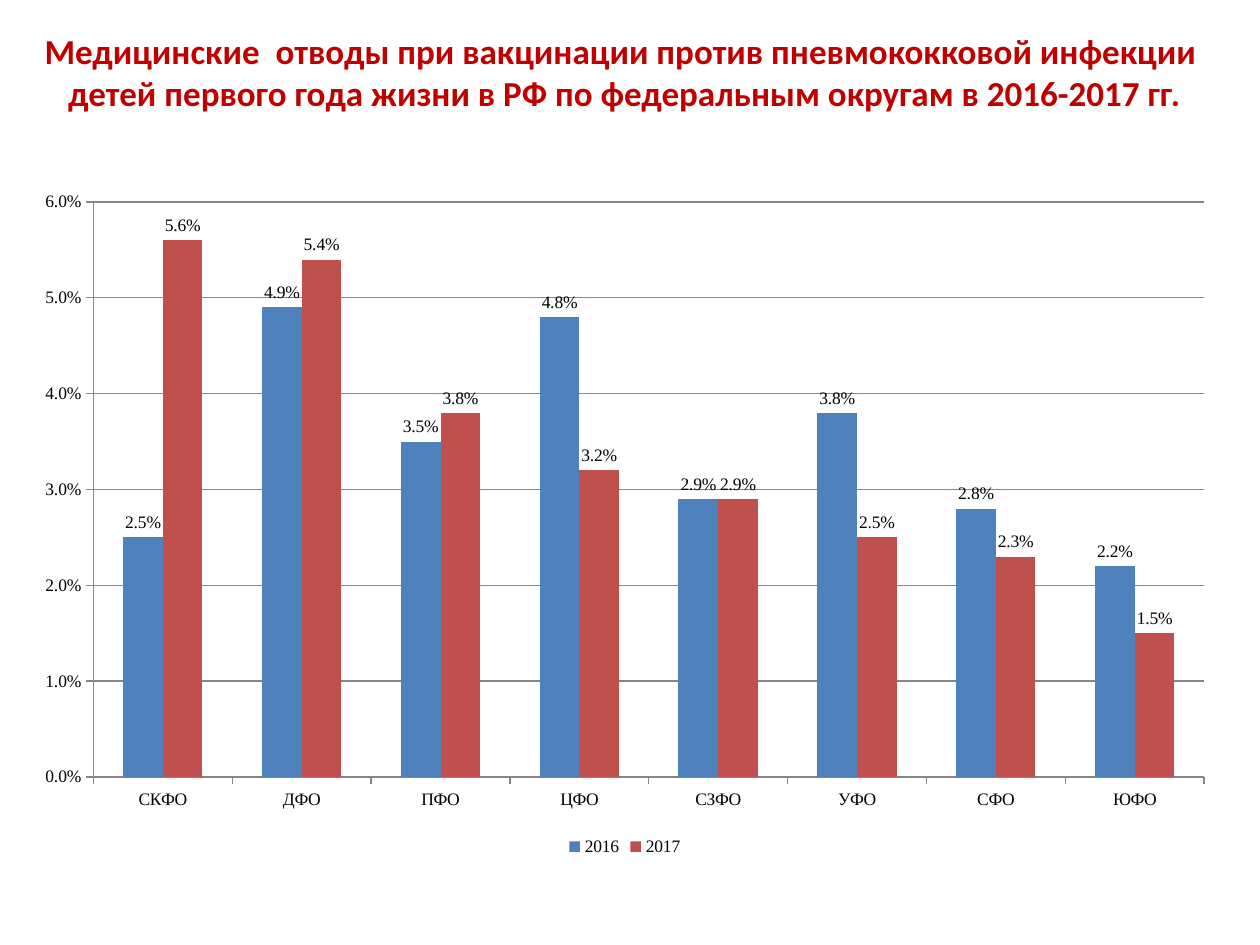
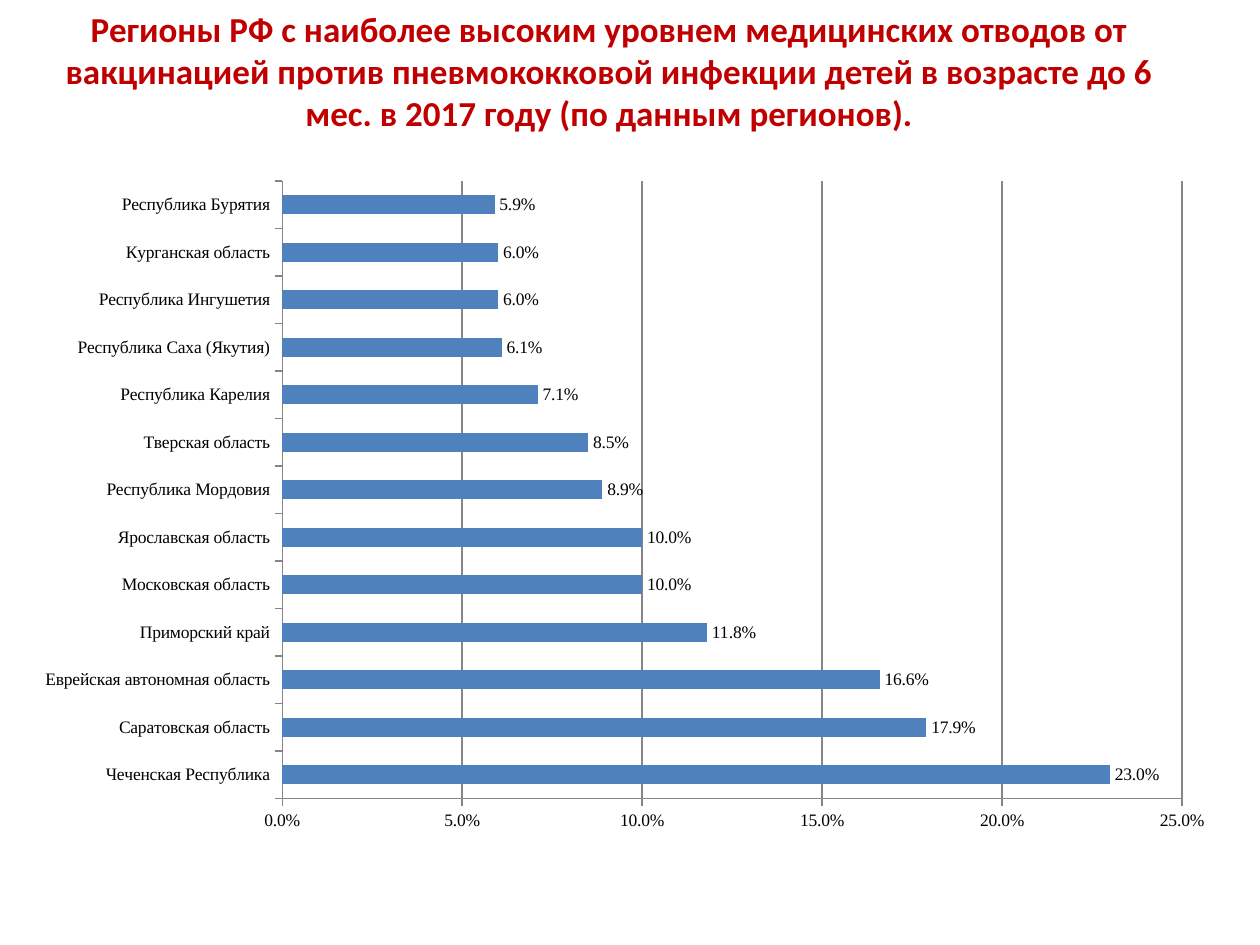
"""Build two slides on medical exemptions from pneumococcal vaccination."""
from pptx import Presentation
from pptx import util as u
from pptx.chart.data import CategoryChartData
from pptx.dml.color import RGBColor
from pptx.enum import chart as ch, text

COLORS = {"title": "C00000", "text": "000000", "blue": "4F81BD",
          "red": "C0504D", "line": "868686", "background": "FFFFFF"}
TITLE_FONT, CHART_FONT = "Calibri", "Times New Roman"
PERCENT = "0.0%"
LEFT, CHART_WIDTH = 0.43, 24.33

DISTRICTS = ["СКФО", "ДФО", "ПФО", "ЦФО", "СЗФО", "УФО", "СФО", "ЮФО"]
DISTRICT_RATES = {
    "2016": [0.025, 0.049, 0.035, 0.048, 0.029, 0.038, 0.028, 0.022],
    "2017": [0.056, 0.054, 0.038, 0.032, 0.029, 0.025, 0.023, 0.015],
}
REGION_RATES = {
    "Чеченская Республика": 0.23,
    "Саратовская область": 0.179,
    "Еврейская автономная область": 0.166,
    "Приморский край": 0.118,
    "Московская область": 0.1,
    "Ярославская область": 0.1,
    "Республика Мордовия": 0.089,
    "Тверская область": 0.085,
    "Республика Карелия": 0.071,
    "Республика Саха (Якутия)": 0.061,
    "Республика Ингушетия": 0.06,
    "Курганская область": 0.06,
    "Республика Бурятия": 0.059,
}


def rgb(name):
    return RGBColor.from_string(COLORS[name])


class Deck:
    def __init__(self):
        self.prs = Presentation()
        self.prs.slide_width, self.prs.slide_height = u.Cm(25.4), u.Cm(19.05)
        self.s = None

    def slide(self):
        self.s = self.prs.slides.add_slide(self.prs.slide_layouts[5])
        fill = self.s.background.fill
        fill.solid()
        fill.fore_color.rgb = rgb("background")

    def title(self, words, top, width, height):
        sp = self.s.shapes.title
        sp.left, sp.top = u.Cm(LEFT), u.Cm(top)
        sp.width, sp.height = u.Cm(width), u.Cm(height)
        tf = sp.text_frame
        tf.text = words
        tf.word_wrap = True
        tf.auto_size = text.MSO_AUTO_SIZE.NONE
        tf.vertical_anchor = text.MSO_ANCHOR.MIDDLE
        tf.margin_bottom = u.Cm(0.85)
        p = tf.paragraphs[0]
        p.alignment = text.PP_ALIGN.CENTER
        p.font.name, p.font.size, p.font.bold = TITLE_FONT, u.Pt(20), True
        p.font.color.rgb = rgb("title")

    def chart(self, kind, categories, series, top, height, maximum, step):
        data = CategoryChartData(number_format=PERCENT)
        data.categories = categories
        for name, values in series.items():
            data.add_series(name, values)
        chart = self.s.shapes.add_chart(
            kind, u.Cm(LEFT), u.Cm(top), u.Cm(CHART_WIDTH), u.Cm(height), data).chart
        chart.has_title = False
        chart.font.name, chart.font.size = CHART_FONT, u.Pt(10)
        chart.font.color.rgb = rgb("text")
        self.axes(chart, maximum, step)
        self.bars(chart.plots[0])
        chart.has_legend = len(series) > 1
        if chart.has_legend:
            chart.legend.position = ch.XL_LEGEND_POSITION.BOTTOM
            chart.legend.include_in_layout = False

    def axes(self, chart, maximum, step):
        value = chart.value_axis
        value.minimum_scale, value.maximum_scale = 0, maximum
        value.major_unit = step
        value.has_major_gridlines = True
        value.tick_labels.number_format = PERCENT
        value.tick_labels.number_format_is_linked = False
        for axis in (value, chart.category_axis):
            axis.major_tick_mark = ch.XL_TICK_MARK.OUTSIDE
            axis.minor_tick_mark = ch.XL_TICK_MARK.NONE
        for part in (value, chart.category_axis, value.major_gridlines):
            part.format.line.color.rgb = rgb("line")
            part.format.line.width = u.Pt(0.75)

    def bars(self, plot):
        plot.gap_width, plot.overlap = 150, 0
        plot.vary_by_categories = False
        for series, color in zip(plot.series, ("blue", "red")):
            series.format.fill.solid()
            series.format.fill.fore_color.rgb = rgb(color)
            series.invert_if_negative = False
            labels = series.data_labels
            labels.show_value = True
            labels.position = ch.XL_LABEL_POSITION.OUTSIDE_END
            labels.number_format = PERCENT
            labels.number_format_is_linked = False


def main():
    deck = Deck()

    deck.slide()
    deck.title("Медицинские  отводы при вакцинации против пневмококковой инфекции  "
               "детей первого года жизни в РФ по федеральным округам в 2016-2017 гг.",
               0.64, 24.33, 2.34)
    deck.chart(ch.XL_CHART_TYPE.COLUMN_CLUSTERED, DISTRICTS, DISTRICT_RATES,
               3.6, 13.77, 0.06, 0.01)

    deck.slide()
    deck.title("Регионы РФ с наиболее высоким уровнем медицинских отводов от "
               "вакцинацией против пневмококковой инфекции детей в возрасте до 6 "
               "мес. в 2017 году (по данным регионов).",
               0.2, 23.7, 3.18)
    deck.chart(ch.XL_CHART_TYPE.BAR_CLUSTERED, list(REGION_RATES),
               {"2017": list(REGION_RATES.values())}, 3.38, 13.64, 0.25, 0.05)

    deck.prs.save("out.pptx")


if __name__ == "__main__":
    main()
